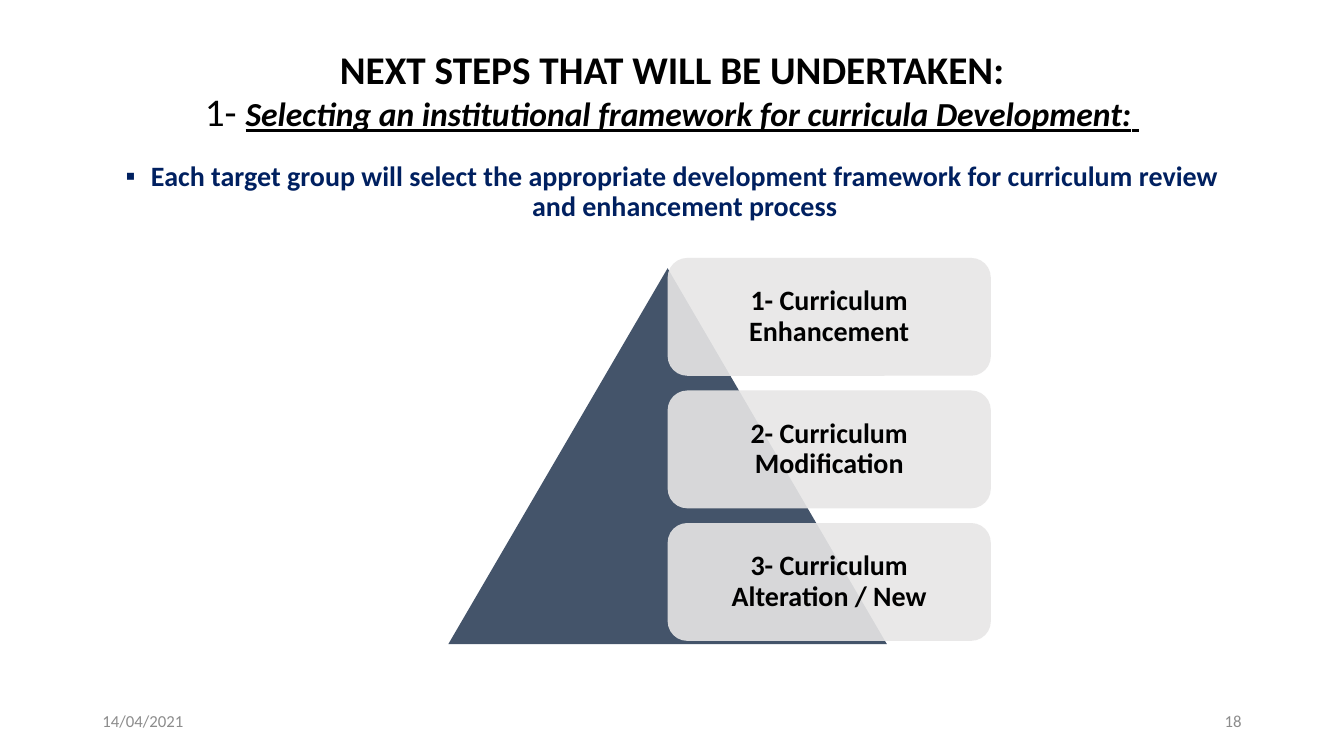
from dataclasses import dataclass

from lxml import etree
from pptx import Presentation
from pptx.dml.color import RGBColor
from pptx.enum.shapes import MSO_SHAPE
from pptx.enum.text import MSO_ANCHOR, MSO_AUTO_SIZE, PP_ALIGN
from pptx.oxml.ns import qn
from pptx.util import Cm, Pt

TRIANGLE, ROUNDED = MSO_SHAPE.ISOSCELES_TRIANGLE, MSO_SHAPE.ROUNDED_RECTANGLE
TOP, MIDDLE = MSO_ANCHOR.TOP, MSO_ANCHOR.MIDDLE
LEFT, CENTER, RIGHT = PP_ALIGN.LEFT, PP_ALIGN.CENTER, PP_ALIGN.RIGHT
NO_AUTOFIT = MSO_AUTO_SIZE.NONE


@dataclass(frozen=True)
class Theme:
    font: str = "Calibri"
    ink: str = "000000"
    navy: str = "002060"
    muted: str = "8C8C8C"
    slate: str = "44546A"
    card: str = "E7E6E6"
    card_alpha: int = 90
    heading: int = 28
    subheading: int = 24
    body: int = 20
    footer: int = 12


@dataclass(frozen=True)
class Box:
    left: float
    top: float
    width: float
    height: float

    def lengths(self):
        return Cm(self.left), Cm(self.top), Cm(self.width), Cm(self.height)


THEME = Theme()
STEPS = ("1- Curriculum Enhancement", "2- Curriculum Modification", "3- Curriculum Alteration / New")


def place(placeholder, box):
    placeholder.left, placeholder.top, placeholder.width, placeholder.height = box.lengths()


def prepare(frame, anchor, align, line_spacing=0.9):
    frame.word_wrap = True
    frame.auto_size = NO_AUTOFIT
    frame.vertical_anchor = anchor
    paragraph = frame.paragraphs[0]
    paragraph.alignment = align
    paragraph.line_spacing = line_spacing
    return paragraph


def add_run(paragraph, text, size, color, bold=False, italic=False, underline=False):
    run = paragraph.add_run()
    run.text = text
    font = run.font
    font.name, font.size = THEME.font, Pt(size)
    font.bold, font.italic, font.underline = bold, italic, underline
    font.color.rgb = RGBColor.from_string(color)


def add_heading(slide, box):
    title = slide.shapes.title
    place(title, box)
    paragraph = prepare(title.text_frame, MIDDLE, CENTER)
    title.text_frame.margin_bottom = Cm(1.14)
    add_run(paragraph, "NEXT STEPS THAT WILL BE UNDERTAKEN:", THEME.heading, THEME.ink, bold=True)
    paragraph.add_line_break()
    line_break = paragraph._p.find(qn("a:br"))
    etree.SubElement(line_break, qn("a:rPr"), sz=str(THEME.heading * 100))
    add_run(paragraph, "1- ", THEME.heading, THEME.ink)
    add_run(paragraph, "Selecting an institutional framework for curricula Development:",
            THEME.subheading, THEME.ink, bold=True, italic=True, underline=True)
    add_run(paragraph, " ", THEME.subheading, THEME.ink, bold=True, underline=True)


def add_statement(slide, box):
    statement = slide.placeholders[1]
    place(statement, box)
    paragraph = prepare(statement.text_frame, TOP, CENTER)
    paragraph.space_before = Pt(10)
    properties = paragraph._p.get_or_add_pPr()
    properties.set("marL", str(Cm(0.64)))
    properties.set("indent", str(-Cm(0.64)))
    etree.SubElement(properties, qn("a:buFont"), typeface="Arial")
    etree.SubElement(properties, qn("a:buChar"), char="▪")
    add_run(paragraph, "Each target group will select the appropriate development framework "
            "for curriculum review and enhancement process", THEME.body, THEME.navy, bold=True)


def add_filled(shapes, preset, box, color):
    shape = shapes.add_shape(preset, *box.lengths())
    shape.shadow.inherit = False
    shape.fill.solid()
    shape.fill.fore_color.rgb = RGBColor.from_string(color)
    shape.line.fill.background()
    return shape


def add_step_card(shapes, box, step):
    card = add_filled(shapes, ROUNDED, box, THEME.card)
    color = card.fill._xPr.find(qn("a:solidFill"))[0]
    etree.SubElement(color, qn("a:alpha"), val=str(THEME.card_alpha * 1000))
    frame = card.text_frame
    frame.margin_left = frame.margin_right = Cm(0.2)
    frame.margin_top = frame.margin_bottom = Cm(0.2)
    add_run(prepare(frame, MIDDLE, CENTER), step, THEME.body, THEME.ink, bold=True)


def add_pyramid(slide, box):
    shapes = slide.shapes.add_group_shape().shapes
    base, inset, card_height, gap = 11.05, 0.26, 2.97, 0.37
    add_filled(shapes, TRIANGLE,
               Box(box.left, box.top + inset, base, box.height - inset), THEME.slate)
    apex = base / 2
    for index, step in enumerate(STEPS):
        top = box.top + index * (card_height + gap)
        add_step_card(shapes, Box(box.left + apex, top, box.width - apex, card_height), step)


def add_footer(slide, box):
    width = 7.62
    for text, left, align in (("14/04/2021", box.left, LEFT),
                              ("18", box.left + box.width - width, RIGHT)):
        area = Box(left, box.top, width, box.height)
        frame = slide.shapes.add_textbox(*area.lengths()).text_frame
        add_run(prepare(frame, MIDDLE, align, 1.0), text, THEME.footer, THEME.muted)


def main():
    presentation = Presentation()
    presentation.slide_width, presentation.slide_height = Cm(33.87), Cm(19.05)
    slide = presentation.slides.add_slide(presentation.slide_layouts[1])
    margin, content_width = 2.33, 29.21
    add_heading(slide, Box(margin, 1.01, content_width, 3.68))
    add_statement(slide, Box(margin, 3.96, content_width, 12.09))
    add_footer(slide, Box(margin, 17.66, content_width, 1.01))
    add_pyramid(slide, Box(11.3, 6.5, 13.67, 9.73))
    presentation.save("out.pptx")


if __name__ == "__main__":
    main()
